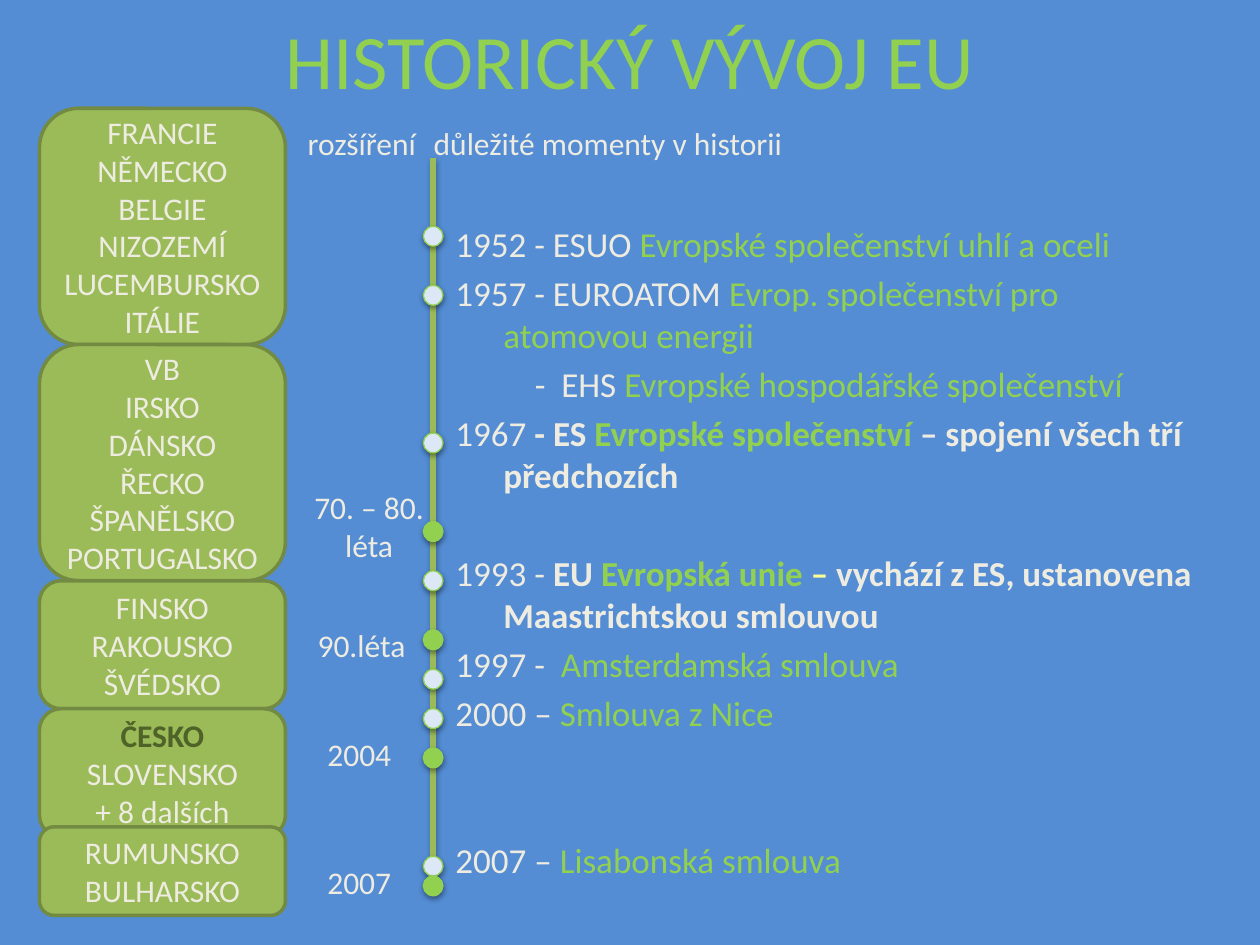
"""Slide with the historical development of the EU on a vertical timeline."""
from lxml.etree import SubElement
from pptx import Presentation
from pptx.dml.color import RGBColor
from pptx.enum.shapes import MSO_CONNECTOR, MSO_SHAPE
from pptx.enum.text import MSO_ANCHOR, PP_ALIGN
from pptx.oxml.ns import qn
from pptx.util import Emu, Inches, Pt

BLUE = RGBColor(0x54, 0x8D, 0xD4)
GREEN = RGBColor(0x92, 0xD0, 0x50)
OLIVE = RGBColor(0x9B, 0xBB, 0x59)
BORDER = RGBColor(0x73, 0x8A, 0x42)
DARK = RGBColor(0x4F, 0x62, 0x28)
CREAM = RGBColor(0xEE, 0xEC, 0xE1)
YELLOW = RGBColor(0xFF, 0xFF, 0x99)
PALE = RGBColor(0xDD, 0xE8, 0xF6)

prs = Presentation()
prs.slide_width, prs.slide_height = Inches(10), Inches(7.5)
U = prs.slide_width / 64
s = prs.slides.add_slide(prs.slide_layouts[6])
s.background.fill.solid()
s.background.fill.fore_color.rgb = BLUE


def write(sp, *runs, size=18, align=PP_ALIGN.LEFT, anchor=MSO_ANCHOR.TOP,
          left=0, indent=0, before=0):
    tf = sp.text_frame
    tf.word_wrap = True
    tf.vertical_anchor = anchor
    p = tf.paragraphs[0]
    if p.runs:
        p = tf.add_paragraph()
    p.alignment = align
    p.space_before = Pt(before)
    pPr = p._p.get_or_add_pPr()
    pPr.set("marL", str(Inches(left)))
    pPr.set("indent", str(Inches(indent)))
    for text, color, bold in runs:
        r = p.add_run()
        r.text = text
        r.font.name, r.font.size, r.font.bold = "Calibri", Pt(size), bold
        r.font.color.rgb = color
    return p


def add_shadow(sp, alpha, dist):
    effects = SubElement(sp._element.spPr, qn("a:effectLst"))
    shadow = SubElement(effects, qn("a:outerShdw"), blurRad=str(Pt(3.1)),
                        dist=str(Pt(dist)), dir="5400000", rotWithShape="0")
    color = SubElement(shadow, qn("a:srgbClr"), val="000000")
    SubElement(color, qn("a:alpha"), val=str(alpha * 1000))


title = s.shapes.add_textbox(Inches(0.5), 0, Inches(9), Emu(int(6 * U)))
write(title, ("HISTORICKÝ VÝVOJ EU", GREEN, False), size=44,
      align=PP_ALIGN.CENTER, anchor=MSO_ANCHOR.MIDDLE)

MEMBERS = [
    (5.5, 12, ["FRANCIE", "NĚMECKO", "BELGIE", "NIZOZEMÍ LUCEMBURSKO ITÁLIE"]),
    (17.5, 12, ["VB", "IRSKO", "DÁNSKO", "ŘECKO", "ŠPANĚLSKO", "PORTUGALSKO"]),
    (29.5, 6.5, ["FINSKO", "RAKOUSKO", "ŠVÉDSKO"]),
    (36, 6.5, ["ČESKO", "SLOVENSKO", "+ 8 dalších"]),
    (42, 4.5, ["RUMUNSKO", "BULHARSKO"]),
]
for top, height, countries in MEMBERS:
    sp = s.shapes.add_shape(MSO_SHAPE.ROUNDED_RECTANGLE, int(2 * U), int(top * U),
                            int(12.5 * U), int(height * U))
    sp.shadow.inherit = False
    sp.fill.solid()
    sp.fill.fore_color.rgb = OLIVE
    sp.line.color.rgb, sp.line.width = BORDER, Pt(2)
    for country in countries:
        home = country == "ČESKO"
        write(sp, (country, DARK if home else CREAM, home),
              align=PP_ALIGN.CENTER, anchor=MSO_ANCHOR.MIDDLE)

axis = s.shapes.add_connector(MSO_CONNECTOR.STRAIGHT, int(22 * U), int(8 * U),
                              int(22 * U), int(45 * U))
axis.line.color.rgb, axis.line.width = OLIVE, Pt(3)
add_shadow(axis, 35, 1.8)

EVENT_ROWS = [11.5, 14.5, 22, 29, 34, 36, 43.5]
ENLARGEMENT_ROWS = [26.5, 32, 38, 44.5]
for color, rows in ((PALE, EVENT_ROWS), (GREEN, ENLARGEMENT_ROWS)):
    for row in rows:
        sp = s.shapes.add_shape(MSO_SHAPE.OVAL, int(21.5 * U), int(row * U),
                                int(U), int(U))
        sp.fill.solid()
        sp.fill.fore_color.rgb = color
        sp.line.color.rgb, sp.line.width = GREEN, Pt(0.75)
        add_shadow(sp, 38, 1.6)

EVENTS = [
    (4, [("1952 - ESUO ", CREAM, False),
         ("Evropské společenství uhlí a oceli", GREEN, False)]),
    (4, [("1957 - EUROATOM ", CREAM, False),
         ("Evrop. společenství pro atomovou energii", GREEN, False)]),
    (4, [("-  EHS ", CREAM, False),
         ("Evropské hospodářské společenství", GREEN, False)]),
    (4, [("1967", CREAM, False), (" - ES ", CREAM, True),
         ("Evropské společenství ", GREEN, True),
         ("– spojení všech tří předchozích", CREAM, True)]),
    (32, [("1993 -", CREAM, False), (" EU ", CREAM, True),
          ("Evropská unie ", GREEN, True), ("– ", YELLOW, True),
          ("vychází z ES, ustanovena Maastrichtskou smlouvou", CREAM, True)]),
    (4, [("1997 -  ", CREAM, False), ("Amsterdamská smlouva", GREEN, False)]),
    (4, [("2000 – ", CREAM, False), ("Smlouva z Nice", GREEN, False)]),
    (60, [("2007 – ", CREAM, False), ("Lisabonská smlouva", GREEN, False)]),
]
body = s.shapes.add_textbox(int(22.5 * U), int(11 * U), int(39.3 * U), int(35.5 * U))
for before, runs in EVENTS:
    dated = runs[0][0][0].isdigit()
    write(body, *runs, size=20, before=before,
          left=0.38 if dated else 0.63, indent=-0.38 if dated else 0)

LABELS = [
    (13, 24.5, 11.5, ["70. – 80.", "léta"], PP_ALIGN.CENTER),
    (15.5, 31.5, 6, ["90.léta"], PP_ALIGN.LEFT),
    (16, 37, 17.5, ["2004"], PP_ALIGN.LEFT),
    (16, 43.5, 5, ["2007"], PP_ALIGN.LEFT),
    (15, 6, 29, ["rozšíření\tdůležité momenty v historii"], PP_ALIGN.LEFT),
]
for left, top, width, lines, align in LABELS:
    sp = s.shapes.add_textbox(int(left * U), int(top * U), int(width * U),
                              Inches(0.1 + 0.3 * len(lines)))
    for line in lines:
        p = write(sp, (line, CREAM, False), align=align)
tabs = SubElement(p._p.get_or_add_pPr(), qn("a:tabLst"))
SubElement(tabs, qn("a:tab"), pos=str(Inches(1.08)), algn="l")

prs.save("out.pptx")
